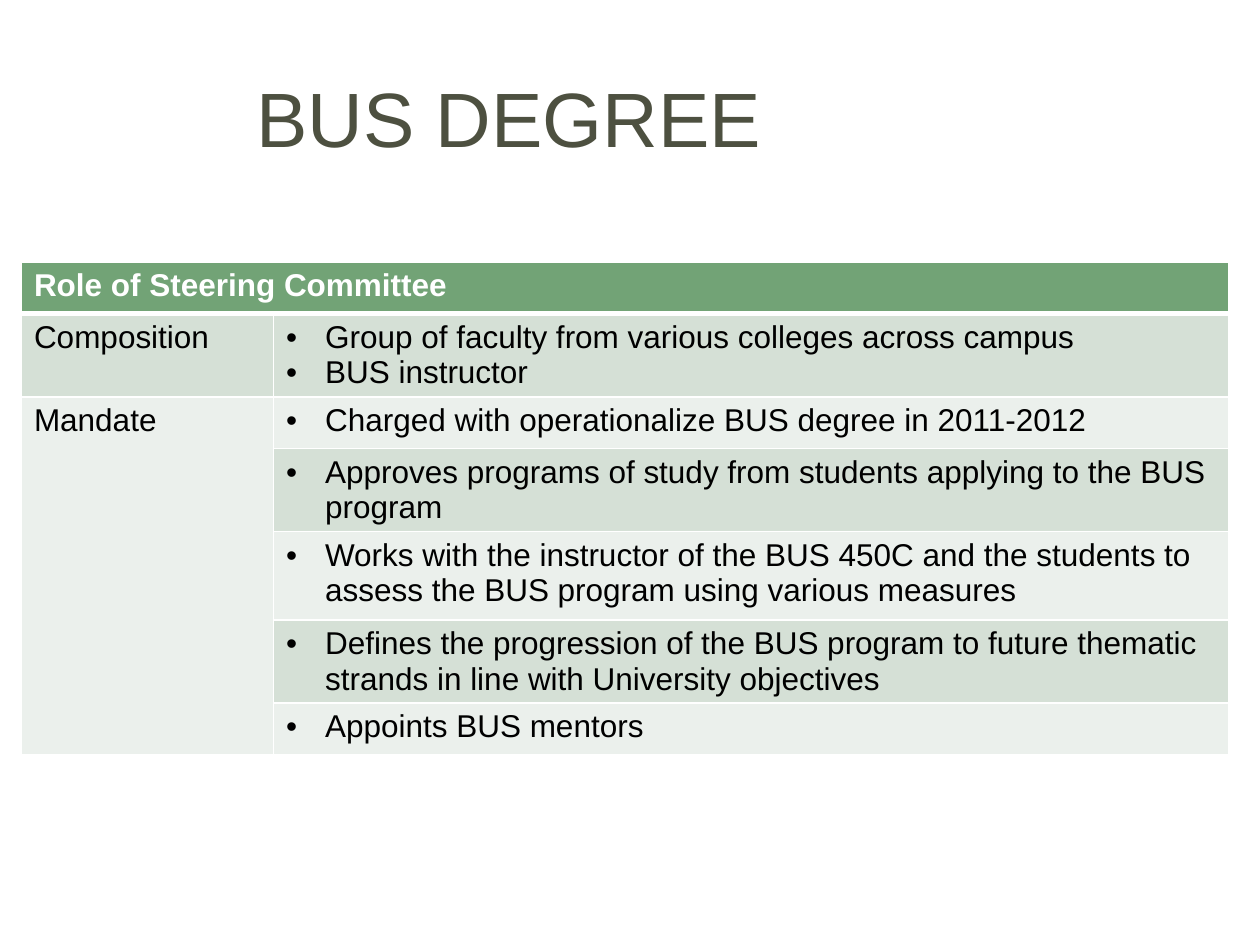
import pptx
import pptx.dml.color
import pptx.enum.text
import pptx.oxml
import pptx.oxml.ns
import pptx.util
from dataclasses import dataclass

Inches = pptx.util.Inches


@dataclass(frozen=True)
class Theme:
    font: str = "Arial"
    title_size: int = 44
    body_size: int = 18
    title: str = "4D5040"
    header: str = "72A376"
    dark_band: str = "D5E0D6"
    light_band: str = "EBF0EC"
    text: str = "000000"
    white: str = "FFFFFF"
    thin_line: int = 1
    thick_line: int = 3


THEME = Theme()
HEADING = "Role of Steering Committee"
SECTIONS = [
    ("Composition", [
        ["Group of faculty from various colleges across campus", "BUS instructor"],
    ]),
    ("Mandate", [
        ["Charged with operationalize BUS degree in 2011-2012"],
        ["Approves programs of study from students applying to the BUS program"],
        ["Works with the instructor of the BUS 450C and the students to "
         "assess the BUS program using various measures"],
        ["Defines the progression of the BUS program to future thematic "
         "strands in line with University objectives"],
        ["Appoints BUS mentors"],
    ]),
]
COLUMN_WIDTHS = [2, 7.58]
ROW_HEIGHTS = [0.41, 0.66, 0.41, 0.66, 0.7, 0.66, 0.41]


def color(value):
    return pptx.dml.color.RGBColor.from_string(value)


def style_font(font, size, value, bold=False):
    font.name = THEME.font
    font.size = pptx.util.Pt(size)
    font.bold = bold
    font.color.rgb = color(value)


def add_title(page, text):
    title = page.shapes.title
    title.left, title.top = Inches(0.5), Inches(0.3)
    title.width, title.height = Inches(7.08), Inches(1.25)
    frame = title.text_frame
    frame.text = text
    frame.vertical_anchor = pptx.enum.text.MSO_ANCHOR.MIDDLE
    paragraph = frame.paragraphs[0]
    paragraph.alignment = pptx.enum.text.PP_ALIGN.CENTER
    style_font(paragraph.runs[0].font, THEME.title_size, THEME.title)


def add_bullet(paragraph):
    properties = paragraph._p.get_or_add_pPr()
    indent = Inches(0.31)
    properties.set("marL", str(indent))
    properties.set("indent", str(-indent))
    properties.append(pptx.oxml.parse_xml(
        f'<a:buFont {pptx.oxml.ns.nsdecls("a")} typeface="{THEME.font}"/>'))
    properties.append(pptx.oxml.parse_xml(
        f'<a:buChar {pptx.oxml.ns.nsdecls("a")} char="•"/>'))


def write_cell(cell, lines, value, bold=False, bulleted=False):
    cell.text_frame.text = "\n".join(lines)
    for paragraph in cell.text_frame.paragraphs:
        if bulleted:
            add_bullet(paragraph)
        for span in paragraph.runs:
            style_font(span.font, THEME.body_size, value, bold)


def style_cell(cell, fill, top, bottom):
    cell.fill.solid()
    cell.fill.fore_color.rgb = color(fill)
    properties = cell._tc.get_or_add_tcPr()
    widths = {"lnL": THEME.thin_line, "lnR": THEME.thin_line,
              "lnT": top, "lnB": bottom}
    for position, (side, width) in enumerate(widths.items()):
        properties.insert(position, pptx.oxml.parse_xml(
            f'<a:{side} {pptx.oxml.ns.nsdecls("a")} w="{pptx.util.Pt(width)}">'
            f'<a:solidFill><a:srgbClr val="{THEME.white}"/></a:solidFill></a:{side}>'))


def style_rows(table):
    for row_index, row in enumerate(table.rows):
        band = THEME.dark_band if row_index % 2 else THEME.light_band
        fill = band if row_index else THEME.header
        top = THEME.thick_line if row_index == 1 else THEME.thin_line
        bottom = THEME.thin_line if row_index else THEME.thick_line
        for cell in row.cells:
            style_cell(cell, fill, top, bottom)


def add_committee_table(page):
    table = page.shapes.add_table(
        len(ROW_HEIGHTS), len(COLUMN_WIDTHS), Inches(0.17), Inches(2.08),
        Inches(sum(COLUMN_WIDTHS)), Inches(sum(ROW_HEIGHTS))).table
    for column, width in zip(table.columns, COLUMN_WIDTHS):
        column.width = Inches(width)
    for row, height in zip(table.rows, ROW_HEIGHTS):
        row.height = Inches(height)
    style_rows(table)
    table.cell(0, 0).merge(table.cell(0, 1))
    write_cell(table.cell(0, 0), [HEADING], THEME.white, bold=True)
    first = 1
    for label, entries in SECTIONS:
        last = first + len(entries) - 1
        if last > first:
            table.cell(first, 0).merge(table.cell(last, 0))
        write_cell(table.cell(first, 0), [label], THEME.text)
        for row_index, lines in enumerate(entries, first):
            write_cell(table.cell(row_index, 1), lines, THEME.text, bulleted=True)
        first = last + 1


def main():
    deck = pptx.Presentation()
    deck.slide_width, deck.slide_height = Inches(10), Inches(7.5)
    page = deck.slides.add_slide(deck.slide_layouts[5])
    page.background.fill.solid()
    page.background.fill.fore_color.rgb = color(THEME.white)
    add_title(page, "BUS DEGREE")
    add_committee_table(page)
    deck.save("out.pptx")


if __name__ == "__main__":
    main()
